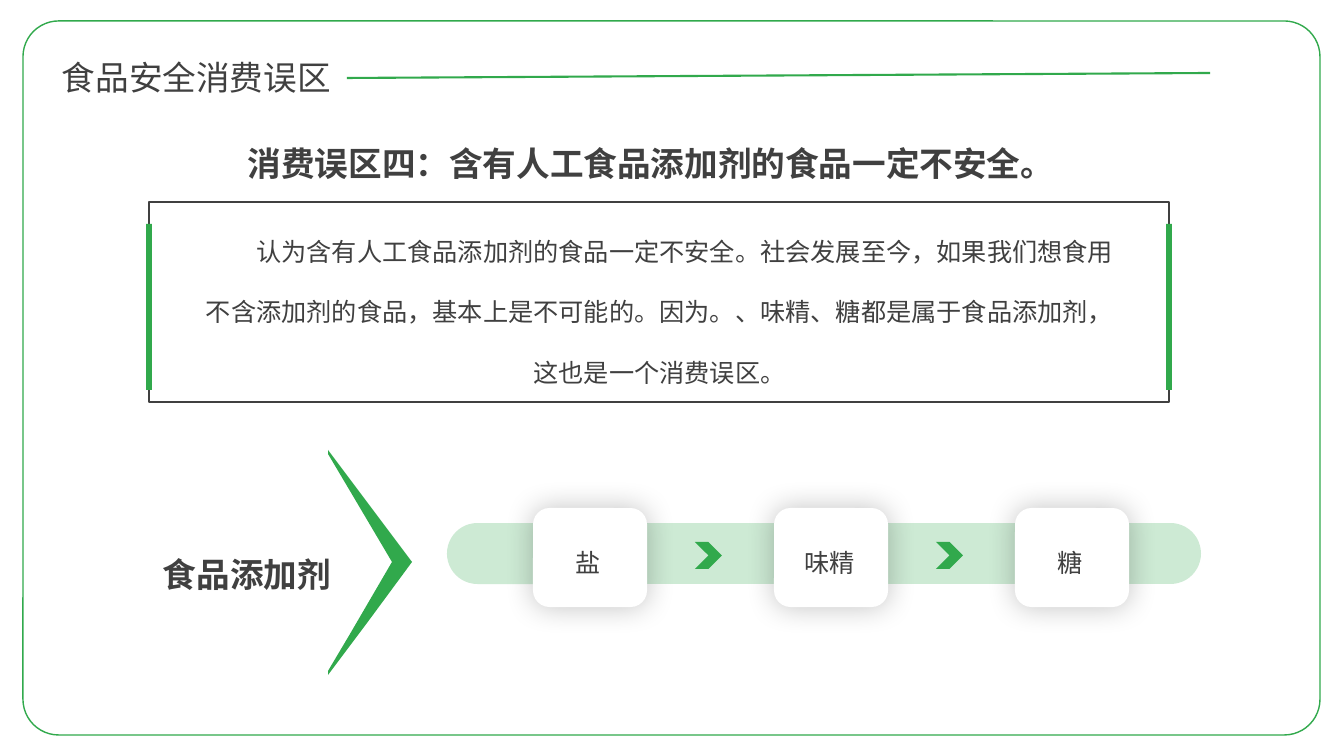
from lxml import etree
from pptx import Presentation
from pptx import util as u
from pptx.dml.color import RGBColor
from pptx.enum import shapes, text
from pptx.oxml.ns import qn

SCALE = 914400 / 100.8
GREEN, GREY, WHITE = "31A94C", "404040", "FFFFFF"
CJK = "Noto Sans CJK SC"
TITLE = "食品安全消费误区"
HEADING = "消费误区四：含有人工食品添加剂的食品一定不安全。"
BODY = ("认为含有人工食品添加剂的食品一定不安全。社会发展至今，如果我们想食用"
        "不含添加剂的食品，基本上是不可能的。因为。、味精、糖都是属于食品添加剂，"
        "这也是一个消费误区。")
LABEL = "食品添加剂"
ADDITIVES = ["盐", "味精", "糖"]
ARROW = [(370, 506), (328, 450), (328, 454), (350, 491), (392, 562),
         (350, 634), (328, 671), (328, 675), (370, 619), (412, 562)]
CARD_LEFT, CARD_STEP = 533, 241

deck = Presentation()
deck.slide_width, deck.slide_height = u.Inches(13.333), u.Inches(7.5)
page = deck.slides.add_slide(deck.slide_layouts[6])


def px(value):
    return round(value * SCALE)


def colour(value):
    return RGBColor.from_string(value)


def paint(shape, fill=None, line=None):
    shape.shadow.inherit = False
    if fill:
        shape.fill.solid()
        shape.fill.fore_color.rgb = colour(fill)
    else:
        shape.fill.background()
    if line:
        shape.line.color.rgb = colour(line)
        shape.line.width = u.Pt(1)
    else:
        shape.line.fill.background()
    return shape


def add_shape(kind, area, fill=None, line=None, radius=None):
    shape = page.shapes.add_shape(kind, *map(px, area))
    if radius is not None:
        shape.adjustments[0] = radius
    return paint(shape, fill, line)


def add_text(words, area, size, spacing=1, bold=False, font=CJK,
             align=text.PP_ALIGN.CENTER, indent=0):
    box = page.shapes.add_textbox(*map(px, area))
    frame = box.text_frame
    frame.word_wrap = True
    frame.auto_size = text.MSO_AUTO_SIZE.SHAPE_TO_FIT_TEXT
    frame.text = words
    para = frame.paragraphs[0]
    para.alignment = align
    para.line_spacing = spacing
    if indent:
        para._p.get_or_add_pPr().set("indent", str(u.Pt(indent)))
    span = para.runs[0]
    span.font.size, span.font.bold, span.font.name = u.Pt(size), bold, font
    span.font.color.rgb = colour(GREY)
    etree.SubElement(span._r.rPr, qn("a:ea"), typeface=CJK)


def add_glow(shape):
    effects = shape._element.spPr.find(qn("a:effectLst"))
    shadow = etree.SubElement(effects, qn("a:outerShdw"), blurRad=str(u.Pt(21)),
                              dist="0", dir="0", algn="ctr", rotWithShape="0")
    tint = etree.SubElement(shadow, qn("a:srgbClr"), val="000000")
    etree.SubElement(tint, qn("a:alpha"), val="24000")


KIND = shapes.MSO_SHAPE
add_shape(KIND.ROUNDED_RECTANGLE, (23, 21, 1297, 714), WHITE, GREEN, 0.05)
add_text(TITLE, (52, 52, 294, 50), 24, align=text.PP_ALIGN.JUSTIFY)
rule = page.shapes.add_connector(shapes.MSO_CONNECTOR.STRAIGHT,
                                 px(347), px(78), px(1210), px(73))
rule.line.color.rgb = colour(GREEN)
rule.line.width = u.Pt(1.5)
etree.SubElement(rule._element.spPr, qn("a:effectLst"))

add_text(HEADING, (137, 118, 1028, 65), 24, 1.5, bold=True)
add_shape(KIND.RECTANGLE, (149, 202, 1020, 200), line=GREY)
for left in (146, 1166):
    add_shape(KIND.RECTANGLE, (left, 224, 6, 166), GREEN)
add_text(BODY, (188, 201, 943, 184), 18, 2, font="Arial", indent=36)

outline = page.shapes.build_freeform(*ARROW[0], scale=SCALE)
outline.add_line_segments(ARROW[1:], close=True)
paint(outline.convert_to_shape(), GREEN)
add_text(LABEL, (141, 537, 212, 57), 24, 1.3, bold=True)

band = add_shape(KIND.ROUNDED_RECTANGLE, (447, 523, 754, 61), GREEN, radius=0.5)
tint = band._element.spPr.find(qn("a:solidFill"))[0]
etree.SubElement(tint, qn("a:alpha"), val="24000")
for index, name in enumerate(ADDITIVES):
    left = CARD_LEFT + index * CARD_STEP
    if index:
        add_shape(KIND.CHEVRON, (left - 79, 542, 27, 27), GREEN)
    add_glow(add_shape(KIND.ROUNDED_RECTANGLE, (left, 508, 114, 99), WHITE))
    add_text(name, (left - 13, 527, 137, 50), 18, 1.5)

deck.save("out.pptx")
